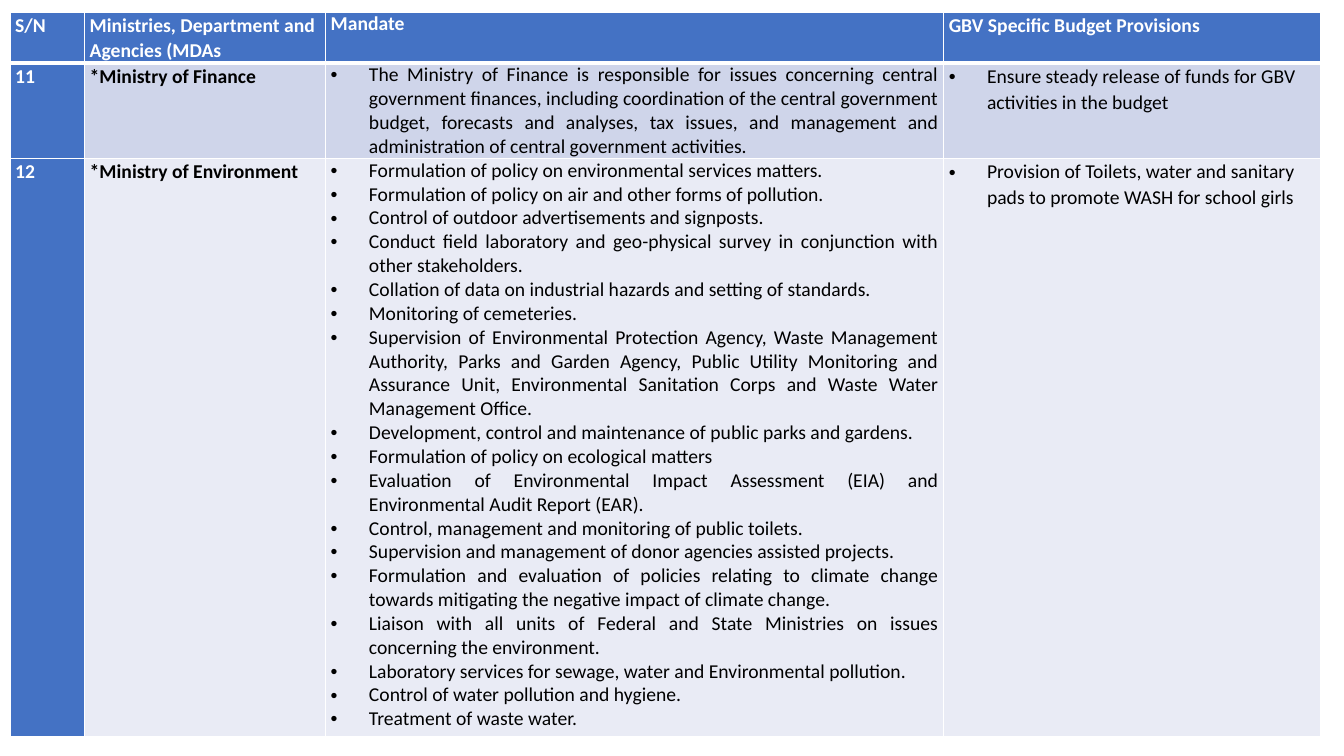
from dataclasses import dataclass

from lxml.etree import SubElement
from pptx import Presentation
from pptx.dml.color import RGBColor
from pptx.enum.text import PP_ALIGN
from pptx.oxml.ns import qn
from pptx.util import Inches, Pt


@dataclass(frozen=True)
class Theme:
    font: str = "Calibri"
    size: int = 14
    head: str = "4472C4"
    bands: tuple = ("CFD5EA", "E9EBF5")
    light: str = "FFFFFF"
    dark: str = "000000"
    thin: int = 1
    thick: int = 3


THEME = Theme()
WIDTH, HEIGHT = Inches(13.33), Inches(7.5)

# Percent of the slide's width and height
LEFT, TOP = 0.75, 1.6
COLS = (5.55, 17.93, 45.99, 28.06)
ROWS = (6.4, 12.13, 76.4)
MANDATE = 2

HEADS = ("S/N", "Ministries, Department and Agencies (MDAs", "Mandate",
         "GBV Specific Budget Provisions")
FINANCE = (
    "The Ministry of Finance is responsible for issues concerning central government "
    "finances, including coordination of the central government budget, forecasts and "
    "analyses, tax issues, and management and administration of central government "
    "activities.",
)
GREEN = (
    "Formulation of policy on environmental services matters.",
    "Formulation of policy on air and other forms of pollution.",
    "Control of outdoor advertisements and signposts.",
    "Conduct field laboratory and geo-physical survey in conjunction with other "
    "stakeholders.",
    "Collation of data on industrial hazards and setting of standards.",
    "Monitoring of cemeteries.",
    "Supervision of Environmental Protection Agency, Waste Management Authority, Parks "
    "and Garden Agency, Public Utility Monitoring and Assurance Unit, Environmental "
    "Sanitation Corps and Waste Water Management Office.",
    "Development, control and maintenance of public parks and gardens.",
    "Formulation of policy on ecological matters",
    "Evaluation of Environmental Impact Assessment (EIA) and Environmental Audit Report "
    "(EAR).",
    "Control, management and monitoring of public toilets.",
    "Supervision and management of donor agencies assisted projects.",
    "Formulation and evaluation of policies relating to climate change towards "
    "mitigating the negative impact of climate change.",
    "Liaison with all units of Federal and State Ministries on issues concerning the "
    "environment.",
    "Laboratory services for sewage, water and Environmental pollution.",
    "Control of water pollution and hygiene.",
    "Treatment of waste water.",
)
BODY = (
    ("11", "*Ministry of Finance", FINANCE,
     ("Ensure steady release of funds for GBV activities in the budget",)),
    ("12", "*Ministry of Environment", GREEN,
     ("Provision of Toilets, water and sanitary pads to promote WASH for school girls",)),
)


def across(share):
    return round(WIDTH * share / 100)


def down(share):
    return round(HEIGHT * share / 100)


def add_bullet(para):
    props = para._p.get_or_add_pPr()
    props.set("marL", str(Inches(0.38)))
    props.set("indent", str(-Inches(0.38)))
    SubElement(props, qn("a:buFont"), typeface="Arial")
    SubElement(props, qn("a:buChar"), char="•")


def put_text(frame, lines, *, color=THEME.dark, bold=False, bullet=False, justify=False):
    """Write one paragraph a line; lines that are not justified get wider spacing."""
    for i, line in enumerate(lines):
        para = frame.add_paragraph() if i else frame.paragraphs[0]
        if justify:
            para.alignment = PP_ALIGN.JUSTIFY
        else:
            para.line_spacing = 1.07
            para.space_after = Pt(8)
        if bullet:
            add_bullet(para)
        run = para.add_run()
        run.text = line
        font = run.font
        font.name, font.size, font.bold = THEME.font, Pt(THEME.size), bold
        font.color.rgb = RGBColor.from_string(color)


def set_edges(cell, **widths):
    props = cell._tc.get_or_add_tcPr()
    for side in "LRTB":
        width = widths.get(side, THEME.thin)
        line = SubElement(props, qn(f"a:ln{side}"), w=str(Pt(width)))
        fill = SubElement(line, qn("a:solidFill"))
        SubElement(fill, qn("a:srgbClr"), val=THEME.light)


def fill_cell(cell, lines, fill, edges, **style):
    cell.margin_left = cell.margin_right = Inches(0.05)
    cell.margin_top = cell.margin_bottom = 0
    set_edges(cell, **edges)
    cell.fill.solid()
    cell.fill.fore_color.rgb = RGBColor.from_string(fill)
    put_text(cell.text_frame, lines, **style)


def add_grid(slide):
    frame = slide.shapes.add_table(
        len(ROWS), len(COLS), across(LEFT), down(TOP),
        across(sum(COLS)), down(sum(ROWS)))
    table = frame.table
    table.first_col = True
    for col, share in zip(table.columns, COLS):
        col.width = across(share)
    for row, share in zip(table.rows, ROWS):
        row.height = down(share)
    return table


def fill_grid(table):
    edges = ({"B": THEME.thick}, {"T": THEME.thick}, {})
    for r, row in enumerate((HEADS, *BODY)):
        for c, text in enumerate(row):
            key = r == 0 or c == 0
            bullet = isinstance(text, tuple)
            fill_cell(
                table.cell(r, c), text if bullet else (text,),
                THEME.head if key else THEME.bands[r - 1], edges[r],
                color=THEME.light if key else THEME.dark,
                bold=not bullet, bullet=bullet, justify=c == MANDATE)


def main():
    deck = Presentation()
    deck.slide_width, deck.slide_height = WIDTH, HEIGHT
    blank = deck.slide_layouts[6]
    fill_grid(add_grid(deck.slides.add_slide(blank)))
    deck.save("out.pptx")


if __name__ == "__main__":
    main()
